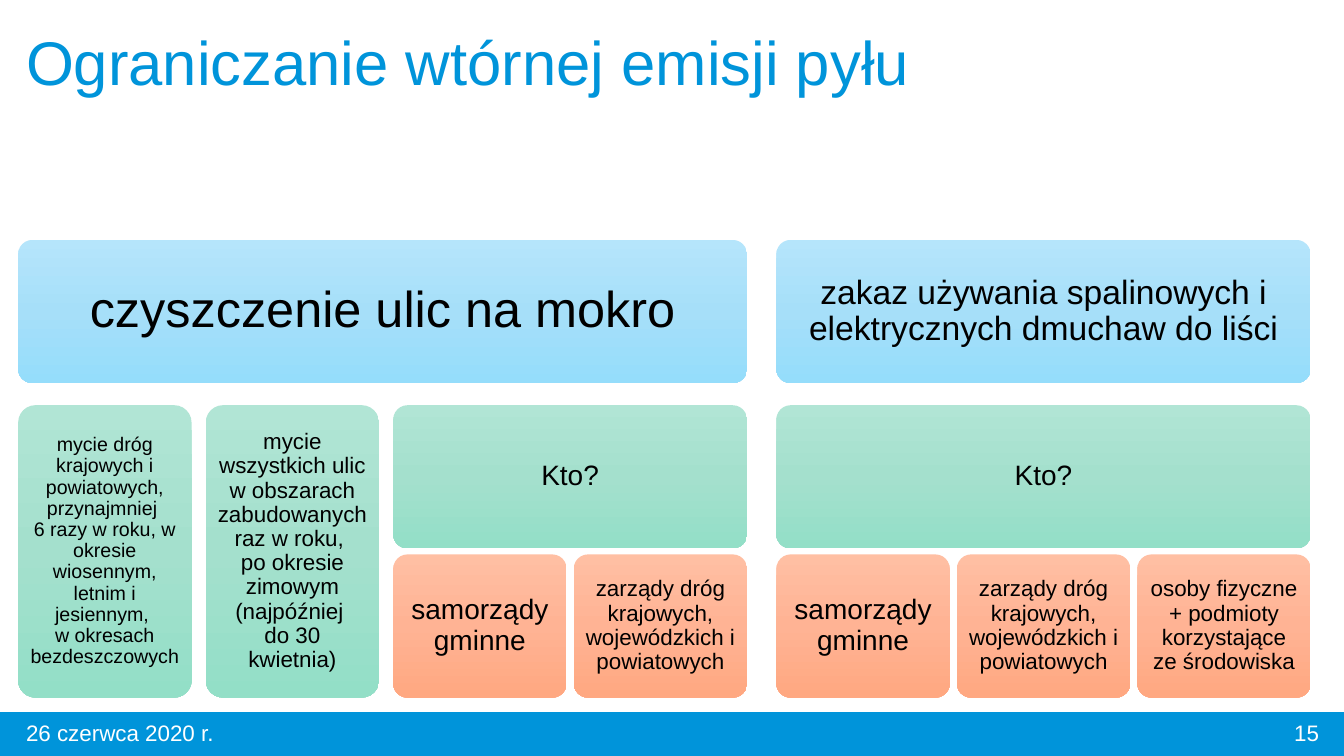
from copy import deepcopy

from pptx import Presentation
from pptx.dml.color import RGBColor
from pptx.enum.shapes import MSO_SHAPE
from pptx.enum.text import MSO_ANCHOR, PP_ALIGN
from pptx.oxml.ns import qn
from pptx.util import Inches, Pt

RECTANGLE, ROUNDED = MSO_SHAPE.RECTANGLE, MSO_SHAPE.ROUNDED_RECTANGLE
MIDDLE = MSO_ANCHOR.MIDDLE
LEFT, CENTER, RIGHT = PP_ALIGN.LEFT, PP_ALIGN.CENTER, PP_ALIGN.RIGHT

BLUE = RGBColor(0x00, 0x94, 0xDA)
WHITE = RGBColor(0xFF, 0xFF, 0xFF)
BLACK = RGBColor(0x00, 0x00, 0x00)
LEVEL_COLORS = [
    [RGBColor(0xB5, 0xE5, 0xFB), RGBColor(0xA6, 0xDF, 0xF9), RGBColor(0x95, 0xDD, 0xFB)],
    [RGBColor(0xB1, 0xE5, 0xD5), RGBColor(0xA4, 0xE0, 0xCD), RGBColor(0x93, 0xDF, 0xC7)],
    [RGBColor(0xFF, 0xBF, 0xA3), RGBColor(0xFF, 0xB3, 0x94), RGBColor(0xFF, 0xA8, 0x81)],
]

TITLE = "Ograniczanie wtórnej emisji pyłu"
DATE, PAGE_NUMBER = "26 czerwca 2020 r.", "15"

# Each node: text, font size, inset, children
MUNICIPALITIES = ("samorządy gminne", 20, 0.08, [])
ROAD_BOARDS = ("zarządy dróg krajowych, wojewódzkich i powiatowych", 16, 0.07, [])
PERSONS = ("osoby fizyczne + podmioty korzystające ze środowiska", 16, 0.07, [])
MAIN_ROADS = (
    "mycie dróg krajowych i powiatowych, przynajmniej \n6 razy w roku, w okresie "
    "wiosennym, letnim i jesiennym, \nw okresach bezdeszczowych ", 14, 0.06, [])
ALL_STREETS = (
    "mycie wszystkich ulic w obszarach zabudowanych raz w roku, \npo okresie "
    "zimowym (najpóźniej \ndo 30 kwietnia)", 16, 0.07, [])
TREES = [
    ("czyszczenie ulic na mokro", 36, 0.15, [
        MAIN_ROADS, ALL_STREETS,
        ("Kto?", 20, 0.08, [MUNICIPALITIES, ROAD_BOARDS])]),
    ("zakaz używania spalinowych i elektrycznych dmuchaw do liści", 24, 0.1, [
        ("Kto?", 20, 0.08, [MUNICIPALITIES, ROAD_BOARDS, PERSONS])]),
]

TREES_LEFT, TREE_GAP = 0.18, 0.29
LEAF_WIDTH = 1.72
CHILD_GAPS = [0.14, 0.07]
ROW_TOPS = [2.38, 4.02, 5.5]
ROW_HEIGHT = 1.42
BOTTOM = ROW_TOPS[-1] + ROW_HEIGHT


def write(shape, text, size, color, align, insets=(0.1, 0.05), spacing=0.9):
    frame = shape.text_frame
    across, down = (Inches(inset) for inset in insets)
    settings = {"word_wrap": True, "vertical_anchor": MIDDLE,
                "margin_left": across, "margin_right": across,
                "margin_top": down, "margin_bottom": down}
    for name, value in settings.items():
        setattr(frame, name, value)
    para = frame.paragraphs[0]
    para.text = text
    para.alignment = align
    para.line_spacing = spacing
    for span in para.runs:
        for name, value in {"name": "Arial", "size": Pt(size)}.items():
            setattr(span.font, name, value)
        span.font.color.rgb = color
    # Line breaks take the font size of the text around them
    for line_break in para._p.findall(qn("a:br")):
        line_break.append(deepcopy(para.runs[0]._r.rPr))


def add_text(page, place, *text_format, **options):
    box = page.shapes.add_textbox(*map(Inches, place))
    write(box, *text_format, **options)


def fill_gradient(shape, colors):
    """Fill downwards with three evenly spaced colours."""
    shape.fill.gradient()
    shape.fill.gradient_angle = 270
    first = shape._element.spPr.find(".//" + qn("a:gs"))
    first.addnext(deepcopy(first))
    for index, (stop, color) in enumerate(zip(shape.fill.gradient_stops, colors)):
        stop.position = index / (len(colors) - 1)
        stop.color.rgb = color


def tree_width(node, level):
    children = node[3]
    if not children:
        return LEAF_WIDTH
    widths = [tree_width(child, level + 1) for child in children]
    return sum(widths) + CHILD_GAPS[level] * (len(children) - 1)


def draw_tree(page, node, left, level=0):
    """Draw a node with its children below and return its right edge."""
    text, size, inset, children = node
    top, width = ROW_TOPS[level], tree_width(node, level)
    height = ROW_HEIGHT if children else BOTTOM - top
    card = page.shapes.add_shape(ROUNDED, *map(Inches, (left, top, width, height)))
    card.adjustments[0] = 0.1
    card.shadow.inherit = False
    card.line.fill.background()
    fill_gradient(card, LEVEL_COLORS[level])
    write(card, text, size, BLACK, CENTER, insets=(inset, inset))
    child_left = left
    for child in children:
        child_left = draw_tree(page, child, child_left, level + 1) + CHILD_GAPS[level]
    return left + width


def main():
    deck = Presentation()
    deck.slide_width, deck.slide_height = Inches(13.33), Inches(7.5)
    page = deck.slides.add_slide(deck.slide_layouts[6])

    footer = page.shapes.add_shape(RECTANGLE, *map(Inches, (0, 7.07, 13.33, 0.43)))
    footer.shadow.inherit = False
    footer.fill.solid()
    footer.fill.fore_color.rgb = BLUE
    footer.line.color.rgb = BLUE
    footer.line.width = Pt(1)

    add_text(page, (0.16, 0.22, 10.3, 0.85), TITLE, 44, BLUE, LEFT)
    add_text(page, (0.16, 7.07, 4, 0.4), DATE, 16, WHITE, LEFT, spacing=1.0)
    add_text(page, (10.18, 7.07, 3, 0.4), PAGE_NUMBER, 16, WHITE, RIGHT, spacing=1.0)

    left = TREES_LEFT
    for tree in TREES:
        left = draw_tree(page, tree, left) + TREE_GAP

    deck.save("out.pptx")


if __name__ == "__main__":
    main()
